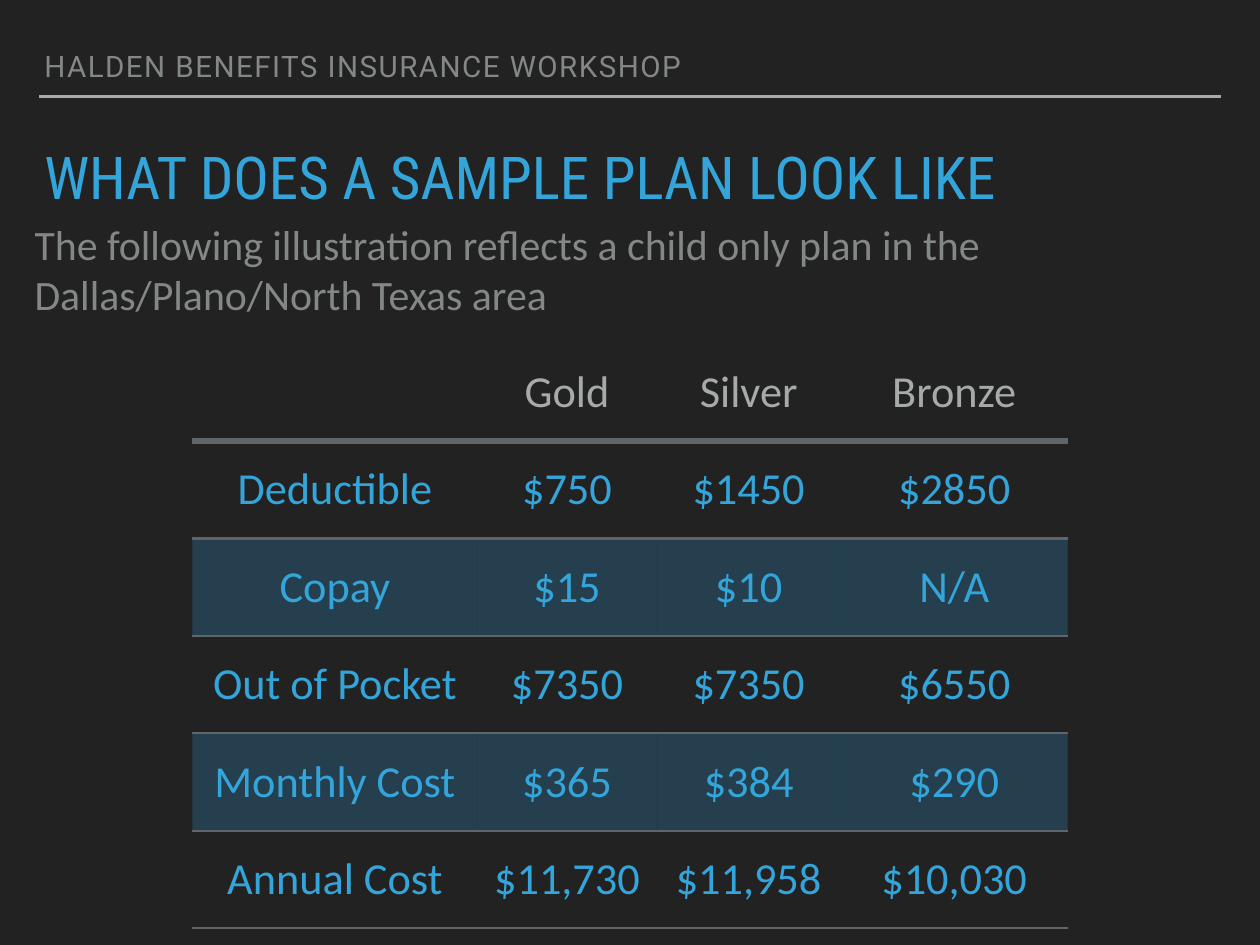
from dataclasses import dataclass

from lxml import etree
from pptx import Presentation
from pptx.dml.color import RGBColor
from pptx.enum import shapes, text
from pptx.oxml import ns
from pptx.util import Inches, Pt


@dataclass(frozen=True)
class Theme:
    back: str = "222222"
    blue: str = "34A5DA"
    gray: str = "838787"
    pale: str = "A6AAA9"
    rule: str = "5F6568"
    band: str = "2E87BB"
    label: int = 24
    body: int = 34
    cell: int = 36
    title: int = 48
    sans: str = "Calibri"
    wide: str = "Roboto"
    slim: str = "Roboto Condensed"


THEME = Theme()
INSET = Inches(0.06)
NO_STYLE = "{2D5ABB26-0587-4C30-8999-92F81FD0307C}"
COLS = (3.22, 2.02, 2.08, 2.56)
ROW = 1.1
PLANS = (
    ("", "Gold", "Silver", "Bronze"),
    ("Deductible", "$750", "$1450", "$2850"),
    ("Copay", "$15", "$10", "N/A"),
    ("Out of Pocket", "$7350", "$7350", "$6550"),
    ("Monthly Cost", "$365", "$384", "$290"),
    ("Annual Cost", "$11,730", "$11,958", "$10,030"),
)


def rgb(tone):
    return RGBColor.from_string(tone)


def style(para, size, face, tone):
    font = para.font
    font.size, font.name = Pt(size), face
    font.color.rgb = rgb(tone)


def inset(item):
    """Give a text frame or a cell the same margin on all sides."""
    item.margin_left = item.margin_right = INSET
    item.margin_top = item.margin_bottom = INSET


def add_text(slide, box, words, size, face, tone, lines=1.0,
             anchor=text.MSO_ANCHOR.TOP):
    frame = slide.shapes.add_textbox(*map(Inches, box)).text_frame
    frame.word_wrap = True
    frame.vertical_anchor = anchor
    inset(frame)
    para = frame.paragraphs[0]
    para.text = words
    para.line_spacing = lines
    style(para, size, face, tone)
    return para


def add_rule(slide, left, right, top):
    line = slide.shapes.add_connector(
        shapes.MSO_CONNECTOR.STRAIGHT,
        Inches(left), Inches(top), Inches(right), Inches(top))
    line.line.color.rgb = rgb(THEME.pale)
    line.line.width = Pt(2)
    etree.SubElement(line._element.spPr, ns.qn("a:effectLst"))


def set_edge(cell, width):
    """Draw the bottom border of a cell."""
    edge = etree.Element(ns.qn("a:lnB"), w=str(Pt(width)))
    fill = etree.SubElement(edge, ns.qn("a:solidFill"))
    etree.SubElement(fill, ns.qn("a:srgbClr"), val=THEME.rule)
    cell._tc.get_or_add_tcPr().insert(0, edge)


def set_fill(cell, band):
    if not band:
        cell.fill.background()
        return
    cell.fill.solid()
    cell.fill.fore_color.rgb = rgb(THEME.band)
    tone = cell._tc.tcPr.find(".//" + ns.qn("a:srgbClr"))
    etree.SubElement(tone, ns.qn("a:alpha"), val="29000")


def add_plans(slide, left, top):
    table = slide.shapes.add_table(
        len(PLANS), len(COLS), Inches(left), Inches(top),
        Inches(sum(COLS)), Inches(ROW * len(PLANS))).table
    table._tbl.tblPr.find(ns.qn("a:tableStyleId")).text = NO_STYLE
    for col, width in zip(table.columns, COLS):
        col.width = Inches(width)
    for r, plan in enumerate(PLANS):
        table.rows[r].height = Inches(ROW)
        for c, words in enumerate(plan):
            cell = table.cell(r, c)
            inset(cell)
            cell.vertical_anchor = text.MSO_ANCHOR.MIDDLE
            para = cell.text_frame.paragraphs[0]
            para.text = words
            para.alignment = text.PP_ALIGN.CENTER
            style(para, THEME.cell, THEME.sans,
                  THEME.blue if r else THEME.pale)
            set_fill(cell, r and r % 2 == 0)
            set_edge(cell, 2 if r else 5)


def main():
    deck = Presentation()
    deck.slide_width, deck.slide_height = Inches(14.22), Inches(10.67)
    slide = deck.slides.add_slide(deck.slide_layouts[6])
    slide.background.fill.solid()
    slide.background.fill.fore_color.rgb = rgb(THEME.back)

    add_rule(slide, 0.44, 13.78, 1.09)
    label = add_text(slide, (0.44, 0.5, 12.22, 0.5),
                     "HALDEN BENEFITS INSURANCE WORKSHOP", THEME.label,
                     THEME.wide, THEME.gray, 0.8, text.MSO_ANCHOR.BOTTOM)
    label.runs[0].font._element.set("spc", "120")
    add_text(slide, (0.44, 1.68, 13.33, 0.79),
             "WHAT DOES A SAMPLE PLAN LOOK LIKE",
             THEME.title, THEME.slim, THEME.blue, 0.8)
    add_text(slide, (0.33, 2.41, 13.33, 1.3),
             "The following illustration reflects a child only plan in the "
             "Dallas/Plano/North Texas area",
             THEME.body, THEME.sans, THEME.gray)
    add_plans(slide, 2.17, 3.88)
    deck.save("out.pptx")


if __name__ == "__main__":
    main()
